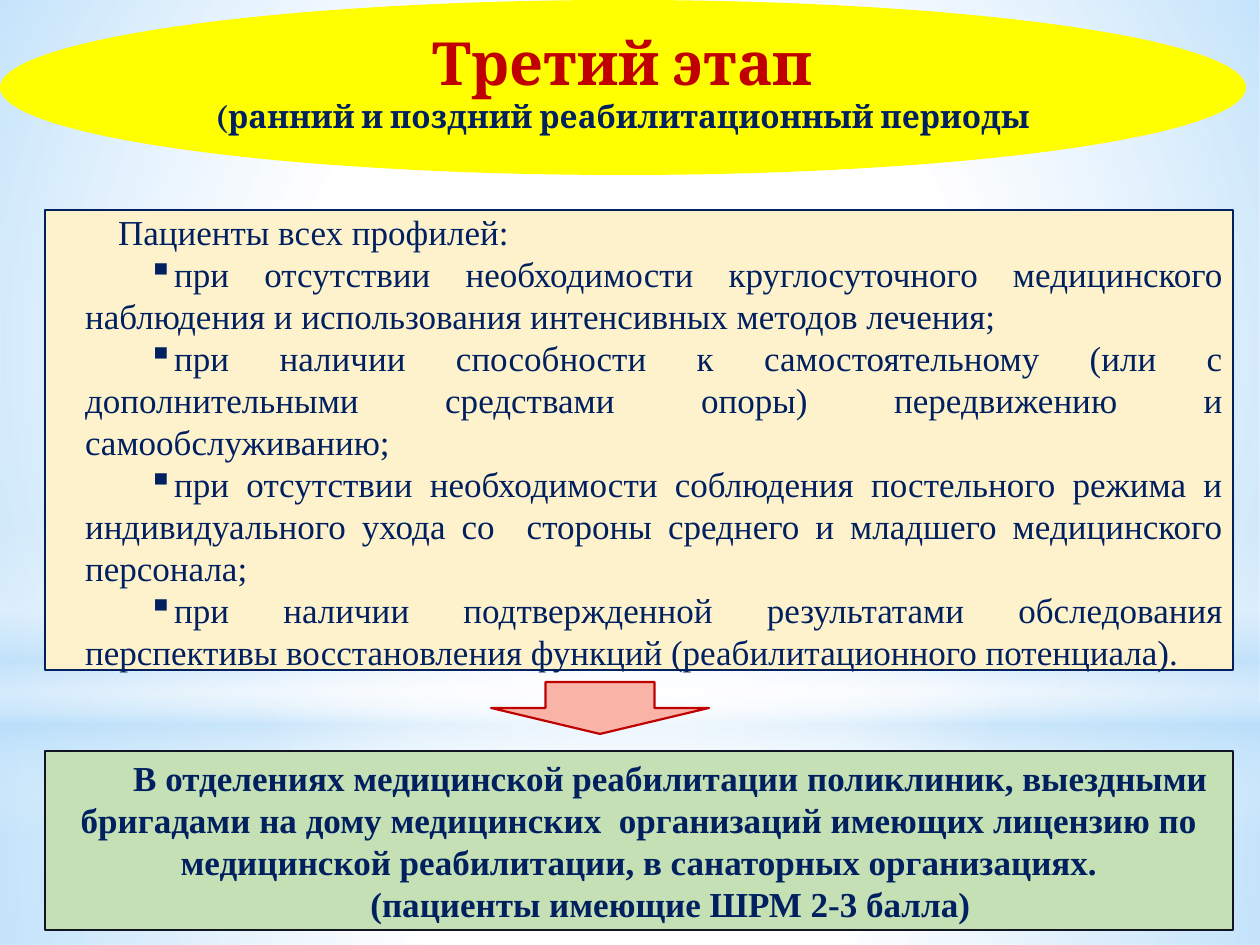
"""Build the slide on the third stage of medical rehabilitation."""
from dataclasses import dataclass
from typing import Optional

from lxml import etree
from pptx import Presentation
from pptx.dml.color import RGBColor
from pptx.enum.shapes import MSO_SHAPE
from pptx.enum.text import MSO_ANCHOR, PP_ALIGN
from pptx.oxml.ns import qn
from pptx.util import Emu, Pt

RECT, OVAL, ARROW = MSO_SHAPE.RECTANGLE, MSO_SHAPE.OVAL, MSO_SHAPE.DOWN_ARROW
TOP, MIDDLE = MSO_ANCHOR.TOP, MSO_ANCHOR.MIDDLE
CENTER, JUSTIFY = PP_ALIGN.CENTER, PP_ALIGN.JUSTIFY

EMU_PER_PX = 914400 / 126
FIRST_LINE = 63
BULLET_MARGIN = 30
SERIF, HEADING = "Times New Roman", "Cambria"
COLORS = {
    "white": "FFFFFF", "sky": "B4DCFA", "yellow": "FFFF00", "red": "C00000",
    "navy": "002060", "cream": "FEF2CD", "green": "C5E0B5", "ink": "111422",
    "pink": "F9B3A7",
}


@dataclass(frozen=True)
class Glow:
    kind: MSO_SHAPE
    box: tuple[int, int, int, int]
    stops: tuple[tuple[int, str, int], ...]
    linear: bool = False


@dataclass(frozen=True)
class Line:
    text: str
    size: int = 20
    font: str = SERIF
    color: str = "navy"
    bold: bool = False
    align: PP_ALIGN = CENTER
    margin: int = 0
    indent: int = 0
    bullet: bool = False


@dataclass(frozen=True)
class Panel:
    kind: MSO_SHAPE
    box: tuple[int, int, int, int]
    fill: str
    outline: Optional[str] = None
    weight: float = 1
    lines: tuple[Line, ...] = ()
    anchor: MSO_ANCHOR = TOP
    side_inset: int = 0


def px(length: float) -> Emu:
    """Convert pixels to EMU."""
    return Emu(round(length * EMU_PER_PX))


def rgb(name: str) -> RGBColor:
    """Look up a named colour."""
    return RGBColor.from_string(COLORS[name])


def add_plain(slide, kind, box):
    """Add a preset shape without shadow or outline."""
    shape = slide.shapes.add_shape(kind, *map(px, box))
    shape.shadow.inherit = False
    shape.line.fill.background()
    return shape


def draw_glow(slide, glow: Glow) -> None:
    """Draw a background shape with a translucent gradient."""
    shape = add_plain(slide, glow.kind, glow.box)
    shape.fill.background()
    gradient = etree.Element(qn("a:gradFill"), rotWithShape="1")
    stops = etree.SubElement(gradient, qn("a:gsLst"))
    for position, color, opacity in glow.stops:
        stop = etree.SubElement(stops, qn("a:gs"), pos=str(position * 1000))
        tint = etree.SubElement(stop, qn("a:srgbClr"), val=COLORS[color])
        etree.SubElement(tint, qn("a:alpha"), val=str(opacity * 1000))
    if glow.linear:
        etree.SubElement(gradient, qn("a:lin"), ang="5400000", scaled="0")
    else:
        path = etree.SubElement(gradient, qn("a:path"), path="circle")
        etree.SubElement(path, qn("a:fillToRect"), dict.fromkeys("ltrb", "50000"))
    properties = shape._element.spPr
    properties.replace(properties.find(qn("a:noFill")), gradient)


def write_line(paragraph, line: Line) -> None:
    """Write and format one paragraph."""
    paragraph.text = line.text
    paragraph.alignment = line.align
    paragraph.font.size = Pt(line.size)
    paragraph.font.name = line.font
    paragraph.font.bold = line.bold
    paragraph.font.color.rgb = rgb(line.color)
    properties = paragraph._p.get_or_add_pPr()
    properties.set("marL", str(px(line.margin)))
    properties.set("indent", str(px(line.indent)))
    if line.bullet:
        bullet = etree.Element(qn("a:buChar"), char="▪")
        properties.find(qn("a:defRPr")).addprevious(bullet)


def draw_panel(slide, panel: Panel) -> None:
    """Draw a filled shape with its text."""
    shape = add_plain(slide, panel.kind, panel.box)
    shape.fill.solid()
    shape.fill.fore_color.rgb = rgb(panel.fill)
    if panel.outline:
        shape.line.color.rgb = rgb(panel.outline)
        shape.line.width = Pt(panel.weight)
    frame = shape.text_frame
    frame.word_wrap = True
    frame.vertical_anchor = panel.anchor
    frame.margin_left = frame.margin_right = px(panel.side_inset)
    frame.margin_top = frame.margin_bottom = 0
    for index, line in enumerate(panel.lines):
        write_line(frame.add_paragraph() if index else frame.paragraphs[0], line)


GLOWS = (
    Glow(RECT, (0, 703, 1260, 242),
         ((0, "white", 91), (37, "white", 76), (100, "sky", 79))),
    Glow(RECT, (0, 0, 1260, 703),
         ((0, "white", 89), (48, "white", 62), (100, "sky", 79))),
    Glow(RECT, (0, 519, 1260, 315),
         ((0, "white", 0), (29, "white", 30), (45, "sky", 40),
          (55, "white", 26), (65, "sky", 60), (100, "white", 0)), linear=True),
    Glow(OVAL, (0, 221, 1260, 703), ((0, "white", 100), (56, "white", 0))),
)
CRITERIA = (
    "при отсутствии необходимости круглосуточного медицинского наблюдения "
    "и использования интенсивных методов лечения;",
    "при наличии способности к самостоятельному (или с дополнительными "
    "средствами опоры) передвижению и самообслуживанию;",
    "при отсутствии необходимости соблюдения постельного режима и индивидуального "
    "ухода со  стороны среднего и младшего медицинского персонала;",
    "при наличии подтвержденной результатами обследования перспективы "
    "восстановления функций (реабилитационного потенциала).",
)
PLACES = (
    "В отделениях медицинской реабилитации поликлиник, выездными бригадами на дому "
    "медицинских  организаций имеющих лицензию по медицинской реабилитации, "
    "в санаторных организациях.",
    "(пациенты имеющие ШРМ 2-3 балла)",
)
PANELS = (
    Panel(OVAL, (0, 0, 1246, 175), "yellow", lines=(
        Line("Третий этап", 34, HEADING, "red", True),
        Line("(ранний и поздний реабилитационный периоды", 18, HEADING, bold=True))),
    Panel(RECT, (45, 210, 1188, 460), "cream", "navy", side_inset=10, lines=(
        Line("Пациенты всех профилей:", align=JUSTIFY, indent=FIRST_LINE),
        *(Line(text, align=JUSTIFY, margin=BULLET_MARGIN, indent=FIRST_LINE,
               bullet=True) for text in CRITERIA))),
    Panel(RECT, (45, 751, 1188, 179), "green", "ink", anchor=MIDDLE, lines=tuple(
        Line(text, bold=True, indent=FIRST_LINE) for text in PLACES)),
    Panel(ARROW, (491, 682, 218, 52), "pink", "red", 1.25),
)


def main() -> None:
    """Build and save the slide."""
    deck = Presentation()
    deck.slide_width, deck.slide_height = px(1260), px(945)
    slide = deck.slides.add_slide(deck.slide_layouts[6])
    for glow in GLOWS:
        draw_glow(slide, glow)
    for panel in PANELS:
        draw_panel(slide, panel)
    deck.save("out.pptx")


if __name__ == "__main__":
    main()
